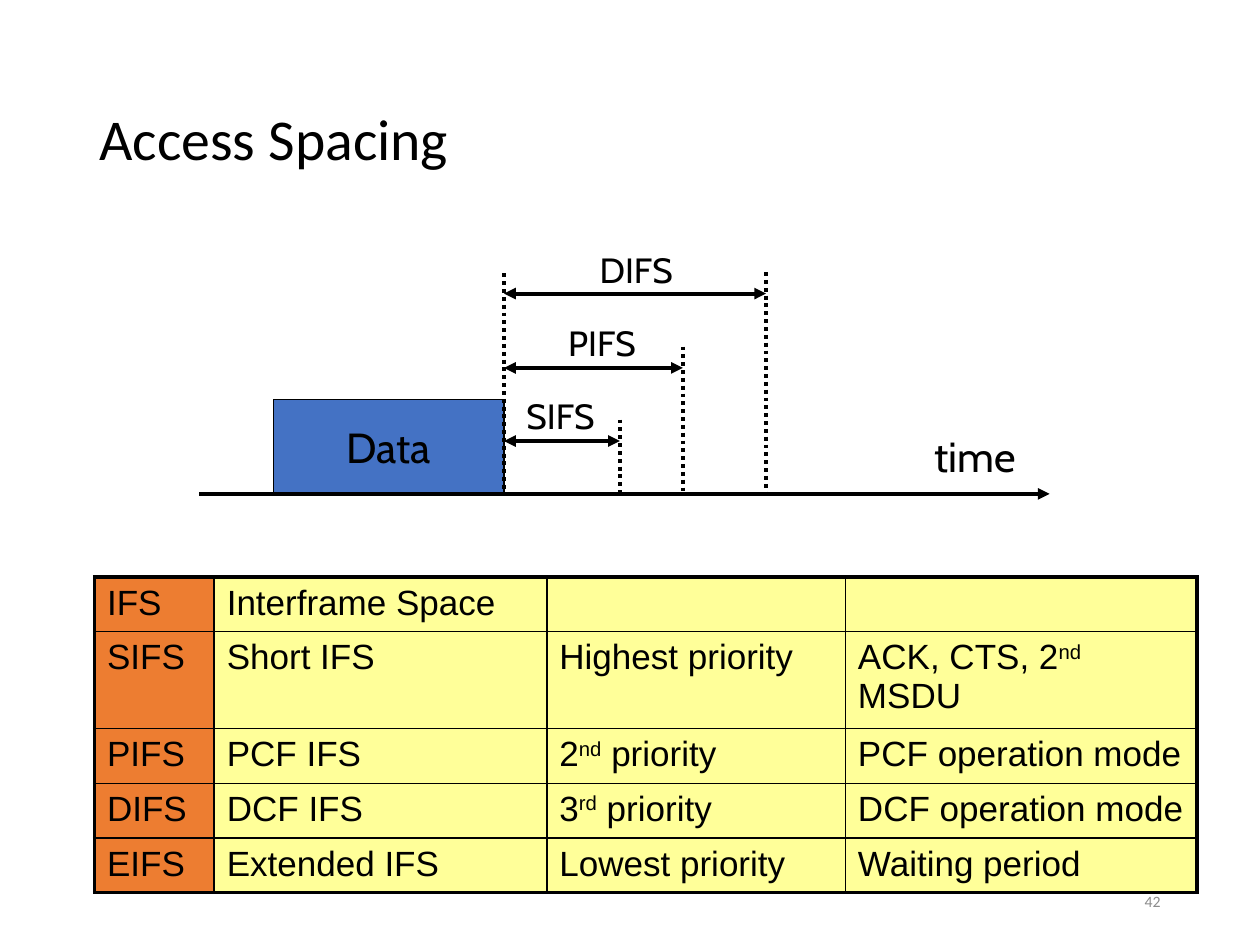
import pptx
import pptx.dml.color
import pptx.enum.dml
import pptx.enum.shapes
import pptx.enum.text
import pptx.oxml.ns
import pptx.util
from dataclasses import dataclass
from lxml import etree
from pptx.util import Inches


@dataclass(frozen=True)
class Theme:
    black: str = "000000"
    data_fill: str = "4472C4"
    key_fill: str = "ED7D31"
    cell_fill: str = "FFFF99"
    number_color: str = "8C8C8C"
    title_size: float = 33
    large_size: float = 24
    body_size: float = 20
    number_size: float = 9
    thin: float = 1
    thick: float = 2.25
    title_font: str = "Calibri"
    diagram_font: str = "Cabin"
    table_font: str = "Arial"


theme = Theme()
rgb = pptx.dml.color.RGBColor.from_string
qn = pptx.oxml.ns.qn
align = pptx.enum.text.PP_ALIGN
middle = pptx.enum.text.MSO_ANCHOR.MIDDLE


def style(font, name, size, color=theme.black):
    font.name = name
    font.size = pptx.util.Pt(size)
    font.color.rgb = rgb(color)


def add_line(shapes, start, end, heads=(), dotted=False):
    """Draw a thick straight line; heads lists headEnd and/or tailEnd."""
    line = shapes.add_connector(
        pptx.enum.shapes.MSO_CONNECTOR.STRAIGHT,
        Inches(start[0]), Inches(start[1]), Inches(end[0]), Inches(end[1]))
    line.line.color.rgb = rgb(theme.black)
    line.line.width = pptx.util.Pt(theme.thick)
    if dotted:
        line.line.dash_style = pptx.enum.dml.MSO_LINE.ROUND_DOT
    properties = line._element.spPr
    for head in heads:
        etree.SubElement(properties.find(qn("a:ln")), qn(f"a:{head}"), type="triangle")
    etree.SubElement(properties, qn("a:effectLst"))


presentation = pptx.Presentation()
presentation.slide_width, presentation.slide_height = Inches(10), Inches(7.5)
slide = presentation.slides.add_slide(presentation.slide_layouts[5])

title = slide.shapes.title
title.left, title.top = Inches(0.69), Inches(0.4)
title.width, title.height = Inches(8.62), Inches(1.45)
title.text_frame.text = "Access Spacing"
title.text_frame.vertical_anchor = middle
title.text_frame.paragraphs[0].alignment = align.LEFT
title.text_frame.paragraphs[0].line_spacing = 0.9
style(title.text_frame.paragraphs[0].runs[0].font, theme.title_font, theme.title_size)

# Timing diagram
axis_y, data_end = 3.92, 4
diagram = slide.shapes.add_group_shape().shapes

data = diagram.add_shape(pptx.enum.shapes.MSO_SHAPE.RECTANGLE,
                         Inches(2.17), Inches(3.17), Inches(1.83), Inches(0.75))
data.shadow.inherit = False
data.fill.solid()
data.fill.fore_color.rgb = rgb(theme.data_fill)
data.line.color.rgb = rgb(theme.black)
data.line.width = pptx.util.Pt(0.75)
data.text_frame.text = "Data"
data.text_frame.word_wrap = False
data.text_frame.vertical_anchor = middle
data.text_frame.paragraphs[0].alignment = align.CENTER
style(data.text_frame.paragraphs[0].runs[0].font, theme.diagram_font, theme.large_size)

add_line(diagram, (1.58, axis_y), (8.33, axis_y), heads=["tailEnd"])
add_line(diagram, (data_end, 2.17), (data_end, axis_y), dotted=True)
for interval_end, arrow_y in [(4.92, 3.5), (5.42, 2.92), (6.08, 2.33)]:
    add_line(diagram, (data_end, arrow_y), (interval_end, arrow_y),
             heads=["headEnd", "tailEnd"])
    add_line(diagram, (interval_end, arrow_y - 0.17), (interval_end, axis_y), dotted=True)

# Boxes are slightly wider than their words so that each stays on one line
labels = [
    ("SIFS", 4.08, 3.08, 0.85, 0.43, theme.body_size),
    ("PIFS", 4.41, 2.5, 0.85, 0.43, theme.body_size),
    ("DIFS", 4.66, 1.92, 0.85, 0.43, theme.body_size),
    ("time", 7.32, 3.37, 0.95, 0.5, theme.large_size),
]
for text, left, top, width, height, size in labels:
    label = diagram.add_textbox(Inches(left), Inches(top), Inches(width), Inches(height))
    label.text_frame.text = text
    label.text_frame.word_wrap = True
    label.text_frame.paragraphs[0].alignment = align.LEFT
    style(label.text_frame.paragraphs[0].runs[0].font, theme.diagram_font, size)

# Table of interframe spaces; text between ^ marks is superscript
rows = [
    ("IFS", "Interframe Space", "", ""),
    ("SIFS", "Short IFS", "Highest priority", "ACK, CTS, 2^nd^ MSDU"),
    ("PIFS", "PCF IFS", "2^nd^ priority", "PCF operation mode"),
    ("DIFS", "DCF IFS", "3^rd^ priority", "DCF operation mode"),
    ("EIFS", "Extended IFS", "Lowest priority", "Waiting period"),
]
column_widths = [0.95, 2.64, 2.37, 2.79]
row_heights = [0.43, 0.77, 0.43, 0.43, 0.43]
table = slide.shapes.add_table(len(rows), len(column_widths), Inches(0.75), Inches(4.58),
                               Inches(8.75), Inches(2.5)).table
table.first_row = table.horz_banding = False
for column, width in zip(table.columns, column_widths):
    column.width = Inches(width)
for row, height in zip(table.rows, row_heights):
    row.height = Inches(height)

for row_index, texts in enumerate(rows):
    for column_index, text in enumerate(texts):
        cell = table.cell(row_index, column_index)
        paragraph = cell.text_frame.paragraphs[0]
        style(paragraph.font, theme.table_font, theme.body_size)
        for part_index, part in enumerate(text.split("^") if text else []):
            run = paragraph.add_run()
            run.text = part
            style(run.font, theme.table_font, theme.body_size)
            if part_index % 2:
                run._r.get_or_add_rPr().set("baseline", "30000")

        outer_edges = {
            "lnL": column_index == 0,
            "lnR": column_index == len(column_widths) - 1,
            "lnT": row_index == 0,
            "lnB": row_index == len(rows) - 1,
        }
        cell_properties = cell._tc.get_or_add_tcPr()
        for edge, is_outer in outer_edges.items():
            width = pptx.util.Pt(theme.thick if is_outer else theme.thin)
            border = etree.SubElement(cell_properties, qn(f"a:{edge}"), w=str(int(width)))
            fill = etree.SubElement(border, qn("a:solidFill"))
            etree.SubElement(fill, qn("a:srgbClr"), val=theme.black)
        cell.fill.solid()
        cell.fill.fore_color.rgb = rgb(theme.cell_fill if column_index else theme.key_fill)

number = slide.shapes.add_textbox(Inches(7.06), Inches(6.95), Inches(2.25), Inches(0.4))
number.text_frame.text = "42"
number.text_frame.word_wrap = True
number.text_frame.vertical_anchor = middle
number.text_frame.paragraphs[0].alignment = align.RIGHT
style(number.text_frame.paragraphs[0].runs[0].font,
      theme.title_font, theme.number_size, theme.number_color)

presentation.save("out.pptx")
